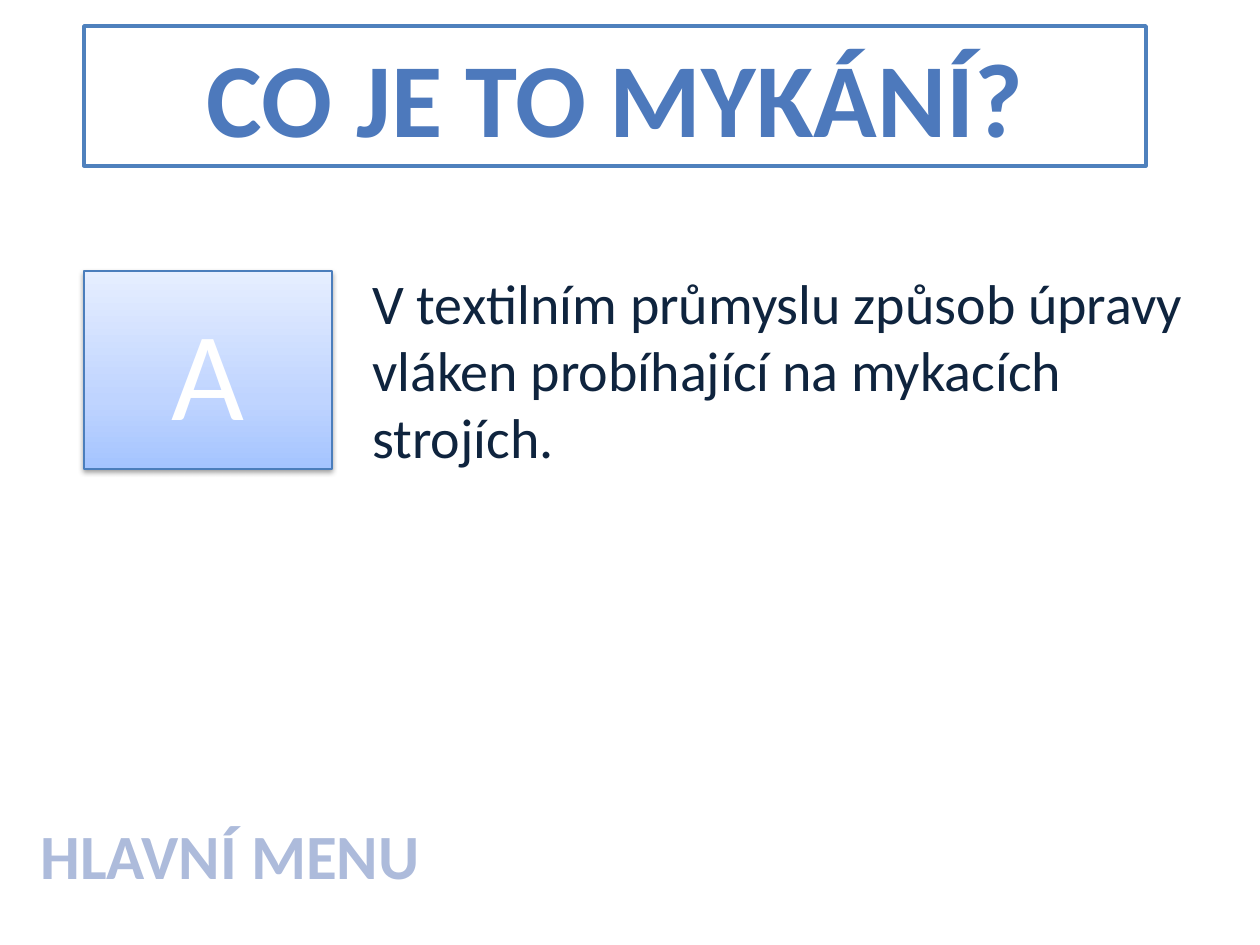
from pptx import Presentation
from pptx.dml.color import RGBColor
from pptx.enum.shapes import MSO_SHAPE
from pptx.enum.text import MSO_ANCHOR, PP_ALIGN
from pptx.oxml import parse_xml
from pptx.oxml.ns import nsdecls, qn
from pptx.util import Pt

RECT = MSO_SHAPE.RECTANGLE
TOP, MIDDLE = MSO_ANCHOR.TOP, MSO_ANCHOR.MIDDLE
LEFT, CENTER = PP_ALIGN.LEFT, PP_ALIGN.CENTER
SCALE = 914400 / 126
FONT = "Calibri"
COLORS = {
    "white": "FFFFFF",
    "title": "4D79BC",
    "border": "4F81BD",
    "edge": "4B7EBC",
    "menu": "ADBBDB",
    "body": "0F243E",
    "shadow": "000000",
}
TILE_STOPS = [(0, "A4C4FF"), (35, "BFD4FF"), (100, "E6EEFF")]


def px(n):
    return round(n * SCALE)


def rgb(name):
    return RGBColor.from_string(COLORS[name])


def write(shape, text, size, color, bold=False, align=LEFT, anchor=TOP):
    frame = shape.text_frame
    frame.word_wrap = True
    frame.vertical_anchor = anchor
    frame.text = text
    para = frame.paragraphs[0]
    para.alignment = align
    font = para.runs[0].font
    font.name, font.size, font.bold = FONT, Pt(size), bold
    font.color.rgb = rgb(color)


def add_text(slide, box, text, size, color, bold=False):
    shape = slide.shapes.add_textbox(*map(px, box))
    write(shape, text, size, color, bold)


def add_box(slide, box, line, width):
    shape = slide.shapes.add_shape(RECT, *map(px, box))
    shape.shadow.inherit = False
    shape.fill.solid()
    shape.fill.fore_color.rgb = rgb("white")
    shape.line.color.rgb = rgb(line)
    shape.line.width = Pt(width)
    return shape


def shade(shape, stops):
    """Fill the shape with a gradient that runs from bottom to top."""
    shape.fill.gradient()
    shape.fill.gradient_angle = 90
    items = "".join(
        f'<a:gs pos="{pos * 1000}"><a:srgbClr val="{color}"/></a:gs>'
        for pos, color in stops
    )
    new = parse_xml(f'<a:gsLst {nsdecls("a")}>{items}</a:gsLst>')
    old = shape._element.spPr.find(qn("a:gradFill")).find(qn("a:gsLst"))
    old.getparent().replace(old, new)


def drop_shadow(shape, blur, dist, alpha):
    effects = shape._element.spPr.find(qn("a:effectLst"))
    effects.append(parse_xml(
        f'<a:outerShdw {nsdecls("a")} blurRad="{Pt(blur)}" '
        f'dist="{Pt(dist)}" dir="5400000" rotWithShape="0">'
        f'<a:srgbClr val="{COLORS["shadow"]}">'
        f'<a:alpha val="{alpha * 1000}"/></a:srgbClr></a:outerShdw>'
    ))


def main():
    deck = Presentation()
    deck.slide_width, deck.slide_height = px(1260), px(945)
    slide = deck.slides.add_slide(deck.slide_layouts[6])

    title = add_box(slide, (84, 26, 1062, 140), "border", 2)
    write(title, "CO JE TO MYKÁNÍ?", 60, "title", True, CENTER)

    add_text(slide, (28, 810, 784, 89), "HLAVNÍ MENU", 36, "menu", True)

    tile = add_box(slide, (84, 271, 248, 198), "edge", 0.75)
    shade(tile, TILE_STOPS)
    drop_shadow(tile, 3.1, 1.6, 38)
    write(tile, "A", 72, "white", align=CENTER, anchor=MIDDLE)

    add_text(
        slide, (360, 262, 883, 217),
        "V textilním průmyslu způsob úpravy vláken "
        "probíhající na mykacích strojích.",
        32, "body",
    )
    deck.save("out.pptx")


if __name__ == "__main__":
    main()
